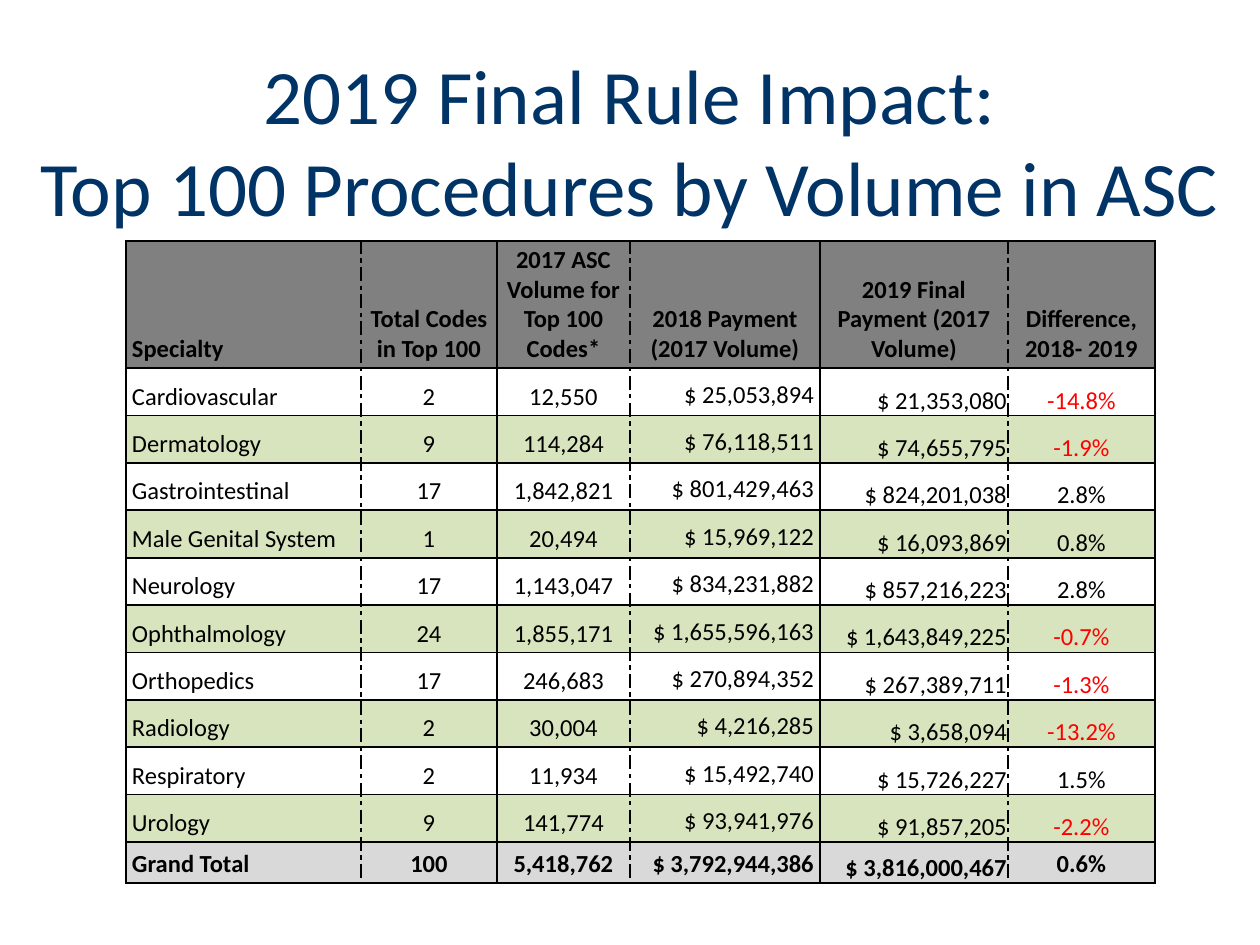
from dataclasses import dataclass

from lxml import etree
from pptx import Presentation
from pptx.dml.color import RGBColor
from pptx.enum.text import MSO_ANCHOR, MSO_AUTO_SIZE, PP_ALIGN
from pptx.oxml.ns import qn
from pptx.util import Emu, Pt

LEFT, CENTER, RIGHT = PP_ALIGN.LEFT, PP_ALIGN.CENTER, PP_ALIGN.RIGHT
MIDDLE, BOTTOM = MSO_ANCHOR.MIDDLE, MSO_ANCHOR.BOTTOM
NO_AUTOFIT = MSO_AUTO_SIZE.NONE
PIXELS_PER_INCH = 126
EMU_PER_INCH = 914400
FONT = "Calibri"
NAVY, BLACK, RED, WHITE = "003366", "000000", "FF0000", "FFFFFF"
HEADER_GRAY, TOTAL_GRAY, GREEN = "808080", "D9D9D9", "D7E4BD"
SOLID, DASH_DOT = "solid", "lgDashDot"
BORDER_PIXELS = 2
HEADER_HEIGHT, BODY_HEIGHT, TOTAL_HEIGHT = 127, 474, 41
TITLE_LINES = ["2019 Final Rule Impact:", "Top 100 Procedures by Volume in ASC"]


@dataclass(frozen=True)
class Insets:
    side: int
    top: int
    bottom: int


NORMAL = Insets(6, 4, 4)
RAISED = Insets(6, 6, 6)
TIGHT = Insets(1, 1, 0)


@dataclass(frozen=True)
class Column:
    heading: str
    width: int
    align: PP_ALIGN
    body_insets: Insets = NORMAL
    total_insets: Insets = NORMAL


@dataclass(frozen=True)
class Specialty:
    name: str
    codes: str
    volume: str
    payment_2018: str
    payment_2019: str
    difference: str

    def values(self) -> list[str]:
        return [self.name, self.codes, self.volume,
                self.payment_2018, self.payment_2019, self.difference]


COLUMNS = [
    Column("Specialty", 235, LEFT),
    Column("Total Codes in Top 100", 136, CENTER),
    Column("2017 ASC Volume for Top 100 Codes*", 133, CENTER),
    Column("2018 Payment (2017 Volume)", 190, RIGHT, RAISED),
    Column("2019 Final Payment (2017 Volume)", 188, RIGHT, TIGHT, TIGHT),
    Column("Difference, 2018- 2019", 147, CENTER, TIGHT),
]
SPECIALTIES = [
    Specialty("Cardiovascular", "2", "12,550", "$ 25,053,894", "$ 21,353,080", "-14.8%"),
    Specialty("Dermatology", "9", "114,284", "$ 76,118,511", "$ 74,655,795", "-1.9%"),
    Specialty("Gastrointestinal", "17", "1,842,821", "$ 801,429,463", "$ 824,201,038", "2.8%"),
    Specialty("Male Genital System", "1", "20,494", "$ 15,969,122", "$ 16,093,869", "0.8%"),
    Specialty("Neurology", "17", "1,143,047", "$ 834,231,882", "$ 857,216,223", "2.8%"),
    Specialty("Ophthalmology", "24", "1,855,171", "$ 1,655,596,163", "$ 1,643,849,225", "-0.7%"),
    Specialty("Orthopedics", "17", "246,683", "$ 270,894,352", "$ 267,389,711", "-1.3%"),
    Specialty("Radiology", "2", "30,004", "$ 4,216,285", "$ 3,658,094", "-13.2%"),
    Specialty("Respiratory", "2", "11,934", "$ 15,492,740", "$ 15,726,227", "1.5%"),
    Specialty("Urology", "9", "141,774", "$ 93,941,976", "$ 91,857,205", "-2.2%"),
]
GRAND_TOTAL = Specialty("Grand Total", "100", "5,418,762",
                        "$ 3,792,944,386", "$ 3,816,000,467", "0.6%")


def px(pixels: int) -> Emu:
    return Emu(round(pixels * EMU_PER_INCH / PIXELS_PER_INCH))


def color(value: str) -> RGBColor:
    return RGBColor.from_string(value)


def write(paragraph, text: str, *, size: int, fill: str = BLACK,
          bold: bool = False, align: PP_ALIGN = LEFT) -> None:
    paragraph.alignment = align
    run = paragraph.add_run()
    run.text = text
    run.font.name = FONT
    run.font.size = Pt(size)
    run.font.bold = bold
    run.font.color.rgb = color(fill)


def add_border(cell, side: str, dash: str) -> None:
    properties = cell._tc.get_or_add_tcPr()
    line = etree.SubElement(properties, qn(f"a:ln{side}"), w=str(px(BORDER_PIXELS)))
    solid_fill = etree.SubElement(line, qn("a:solidFill"))
    etree.SubElement(solid_fill, qn("a:srgbClr"), val=BLACK)
    etree.SubElement(line, qn("a:prstDash"), val=dash)


def format_cell(cell, insets: Insets, fill: str, column_index: int) -> None:
    left, right = (DASH_DOT, SOLID) if column_index % 2 else (SOLID, DASH_DOT)
    for side, dash in (("L", left), ("R", right), ("T", SOLID), ("B", SOLID)):
        add_border(cell, side, dash)
    cell.fill.solid()
    cell.fill.fore_color.rgb = color(fill)
    cell.vertical_anchor = BOTTOM
    cell.margin_left = cell.margin_right = px(insets.side)
    cell.margin_top, cell.margin_bottom = px(insets.top), px(insets.bottom)


def fill_row(table, row_index: int, values: list[str], insets: list[Insets],
             alignments: list[PP_ALIGN], fill: str, bold: bool = False) -> None:
    for index, value in enumerate(values):
        cell = table.cell(row_index, index)
        format_cell(cell, insets[index], fill, index)
        write(cell.text_frame.paragraphs[0], value, size=14, bold=bold,
              fill=RED if value.startswith("-") else BLACK, align=alignments[index])


def add_title(slide) -> None:
    title = slide.shapes.title
    title.left, title.top, title.width, title.height = px(21), px(48), px(1218), px(183)
    frame = title.text_frame
    frame.word_wrap = True
    frame.auto_size = NO_AUTOFIT
    frame.vertical_anchor = MIDDLE
    for index, line in enumerate(TITLE_LINES):
        paragraph = frame.add_paragraph() if index else frame.paragraphs[0]
        write(paragraph, line, size=44, fill=NAVY, align=CENTER)


def add_impact_table(slide) -> None:
    total_index = len(SPECIALTIES) + 1
    table = slide.shapes.add_table(
        total_index + 1, len(COLUMNS), px(126), px(241),
        px(sum(column.width for column in COLUMNS)),
        px(HEADER_HEIGHT + BODY_HEIGHT + TOTAL_HEIGHT)).table
    table.first_row = table.horz_banding = False
    for table_column, column in zip(table.columns, COLUMNS):
        table_column.width = px(column.width)
    for row in table.rows:
        row.height = px(BODY_HEIGHT) // len(SPECIALTIES)
    table.rows[0].height = px(HEADER_HEIGHT)
    table.rows[total_index].height = px(TOTAL_HEIGHT)

    alignments = [column.align for column in COLUMNS]
    fill_row(table, 0, [column.heading for column in COLUMNS],
             [NORMAL] * len(COLUMNS), [LEFT] + [CENTER] * (len(COLUMNS) - 1),
             HEADER_GRAY, bold=True)
    body_insets = [column.body_insets for column in COLUMNS]
    for index, specialty in enumerate(SPECIALTIES, start=1):
        fill_row(table, index, specialty.values(), body_insets, alignments,
                 WHITE if index % 2 else GREEN)
    fill_row(table, total_index, GRAND_TOTAL.values(),
             [column.total_insets for column in COLUMNS], alignments,
             TOTAL_GRAY, bold=True)


def main() -> None:
    presentation = Presentation()
    presentation.slide_width, presentation.slide_height = px(1260), px(945)
    slide = presentation.slides.add_slide(presentation.slide_layouts[5])
    add_title(slide)
    add_impact_table(slide)
    presentation.save("out.pptx")


if __name__ == "__main__":
    main()
